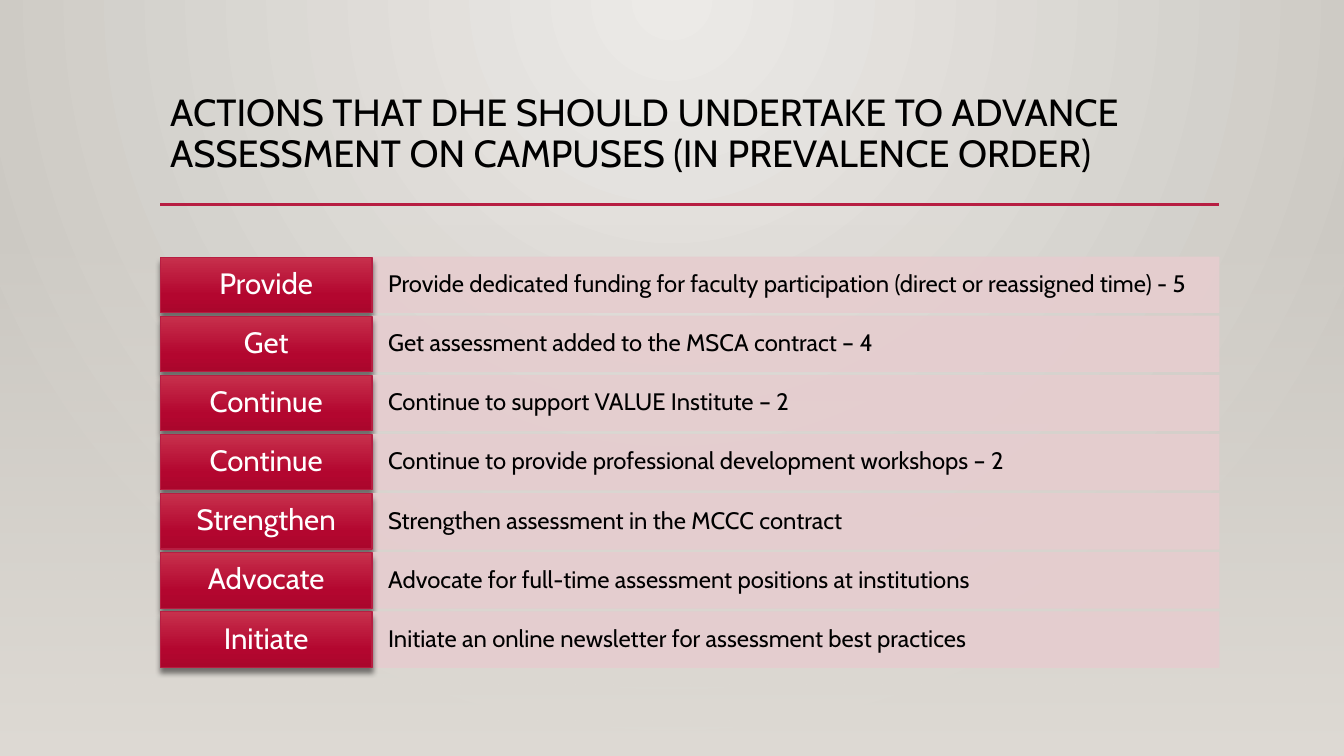
from lxml import etree
from pptx import Presentation
from pptx.dml.color import RGBColor
from pptx.enum.shapes import MSO_CONNECTOR, MSO_SHAPE
from pptx.enum.text import MSO_ANCHOR, PP_ALIGN
from pptx.oxml import parse_xml
from pptx.oxml.ns import nsdecls, qn
from pptx.util import Inches, Pt

COLORS = {
    "black": "000000", "white": "FFFFFF", "rule": "B71E42", "detail": "E6CDCF",
    "glow": "ECEAE7", "edge": "CAC7C1", "haze": "DFDBD5",
    "label_top": "C7304C", "label_middle": "B3062F", "label_bottom": "AA062C",
}
FONT = "Cabin"
LINEAR_DOWN = '<a:lin ang="5400000" scaled="0"/>'
CIRCLE_FROM_TOP = ('<a:path path="circle"><a:fillToRect l="43000" t="0" '
                   'r="43000" b="100000"/></a:path>')

# Grid: five equal columns, the first for labels and four for details
WIDTH, HEIGHT = 13.33, 7.5
LEFT, COLUMN = 1.59, 2.1
TABLE_WIDTH = 5 * COLUMN
RULE_TOP = 2.03
FIRST_ROW, LAST_ROW, ROW_HEIGHT = 2.55, 6.07, 0.55

ACTIONS = [
    ("Provide", "Provide dedicated funding for faculty participation (direct or reassigned time) - 5"),
    ("Get", "Get assessment added to the MSCA contract – 4"),
    ("Continue", "Continue to support VALUE Institute – 2"),
    ("Continue", "Continue to provide professional development workshops – 2"),
    ("Strengthen", "Strengthen assessment in the MCCC contract"),
    ("Advocate", "Advocate for full-time assessment positions at institutions"),
    ("Initiate", "Initiate an online newsletter for assessment best practices"),
]


def set_gradient(properties, stops, direction):
    """Swap the empty fill for a gradient of (position, colour, opacity) stops."""
    stop_xml = "".join(
        f'<a:gs pos="{position * 1000}"><a:srgbClr val="{COLORS[name]}">'
        f'<a:alpha val="{opacity * 1000}"/></a:srgbClr></a:gs>'
        for position, name, opacity in stops)
    gradient = parse_xml(f'<a:gradFill {nsdecls("a")} rotWithShape="1">'
                         f'<a:gsLst>{stop_xml}</a:gsLst>{direction}</a:gradFill>')
    properties.replace(properties.find(qn("a:noFill")), gradient)


def write_text(shape, text, size, color, align, anchor, margins):
    frame = shape.text_frame
    frame.word_wrap = True
    frame.vertical_anchor = anchor
    frame.margin_left = frame.margin_right = Inches(margins[0])
    frame.margin_top = frame.margin_bottom = Inches(margins[1])
    paragraph = frame.paragraphs[0]
    paragraph.text = text
    paragraph.alignment = align
    paragraph.line_spacing = 0.9
    paragraph.font.name = FONT
    paragraph.font.size = Pt(size)
    paragraph.font.color.rgb = RGBColor.from_string(COLORS[color])


presentation = Presentation()
presentation.slide_width = Inches(WIDTH)
presentation.slide_height = Inches(HEIGHT)
slide = presentation.slides.add_slide(presentation.slide_layouts[6])
shapes = slide.shapes

# Background glow
slide.background.fill.background()
set_gradient(slide.element.cSld.bg.bgPr,
             [(0, "glow", 100), (100, "edge", 100)], CIRCLE_FROM_TOP)

# Haze over the lower part
haze_top = 2.21
haze = shapes.add_shape(MSO_SHAPE.RECTANGLE, 0, Inches(haze_top),
                        Inches(WIDTH), Inches(HEIGHT - haze_top))
haze.shadow.inherit = False
haze.line.fill.background()
haze.fill.background()
set_gradient(haze.element.spPr, [(0, "haze", 0), (100, "haze", 100)], LINEAR_DOWN)

# Title and rule
title_top = 0.88
title = shapes.add_textbox(Inches(LEFT), Inches(title_top),
                           Inches(TABLE_WIDTH), Inches(RULE_TOP - title_top))
write_text(title, "ACTIONS THAT DHE SHOULD UNDERTAKE TO ADVANCE ASSESSMENT ON "
           "CAMPUSES (IN PREVALENCE ORDER)", 27, "black",
           PP_ALIGN.LEFT, MSO_ANCHOR.TOP, (0.1, 0.05))
rule = shapes.add_connector(MSO_CONNECTOR.STRAIGHT, Inches(LEFT), Inches(RULE_TOP),
                            Inches(LEFT + TABLE_WIDTH), Inches(RULE_TOP))
rule.line.color.rgb = RGBColor.from_string(COLORS["rule"])
rule.line.width = Pt(2.5)
etree.SubElement(rule.element.spPr, qn("a:effectLst"))

# Action rows
row_pitch = (LAST_ROW - FIRST_ROW) / (len(ACTIONS) - 1)
for row, (action, description) in enumerate(ACTIONS):
    top = Inches(FIRST_ROW + row * row_pitch)

    # Detail bar, slightly see-through
    detail = shapes.add_shape(MSO_SHAPE.RECTANGLE, Inches(LEFT + COLUMN), top,
                              Inches(4 * COLUMN), Inches(ROW_HEIGHT))
    detail.shadow.inherit = False
    detail.fill.solid()
    detail.fill.fore_color.rgb = RGBColor.from_string(COLORS["detail"])
    detail.line.color.rgb = RGBColor.from_string(COLORS["detail"])
    detail.line.width = Pt(0.75)
    for color in detail.element.spPr.iter(qn("a:srgbClr")):
        etree.SubElement(color, qn("a:alpha"), val="90000")
    write_text(detail, description, 17, "black",
               PP_ALIGN.LEFT, MSO_ANCHOR.MIDDLE, (0.16, 0.14))

    # Label with a soft shadow below
    label = shapes.add_shape(MSO_SHAPE.RECTANGLE, Inches(LEFT), top,
                             Inches(COLUMN), Inches(ROW_HEIGHT))
    label.shadow.inherit = False
    label.fill.background()
    set_gradient(label.element.spPr, [(0, "label_top", 100), (69, "label_middle", 100),
                                      (100, "label_bottom", 100)], LINEAR_DOWN)
    label.line.color.rgb = RGBColor.from_string(COLORS["rule"])
    label.line.width = Pt(0.75)
    label.element.spPr.find(qn("a:effectLst")).append(parse_xml(
        f'<a:outerShdw {nsdecls("a")} blurRad="{Pt(4)}" dist="{Pt(4)}" dir="5400000" '
        f'rotWithShape="0"><a:srgbClr val="{COLORS["black"]}"><a:alpha val="48000"/>'
        '</a:srgbClr></a:outerShdw>'))
    write_text(label, action, 21, "white",
               PP_ALIGN.CENTER, MSO_ANCHOR.MIDDLE, (0.11, 0.05))

presentation.save("out.pptx")
